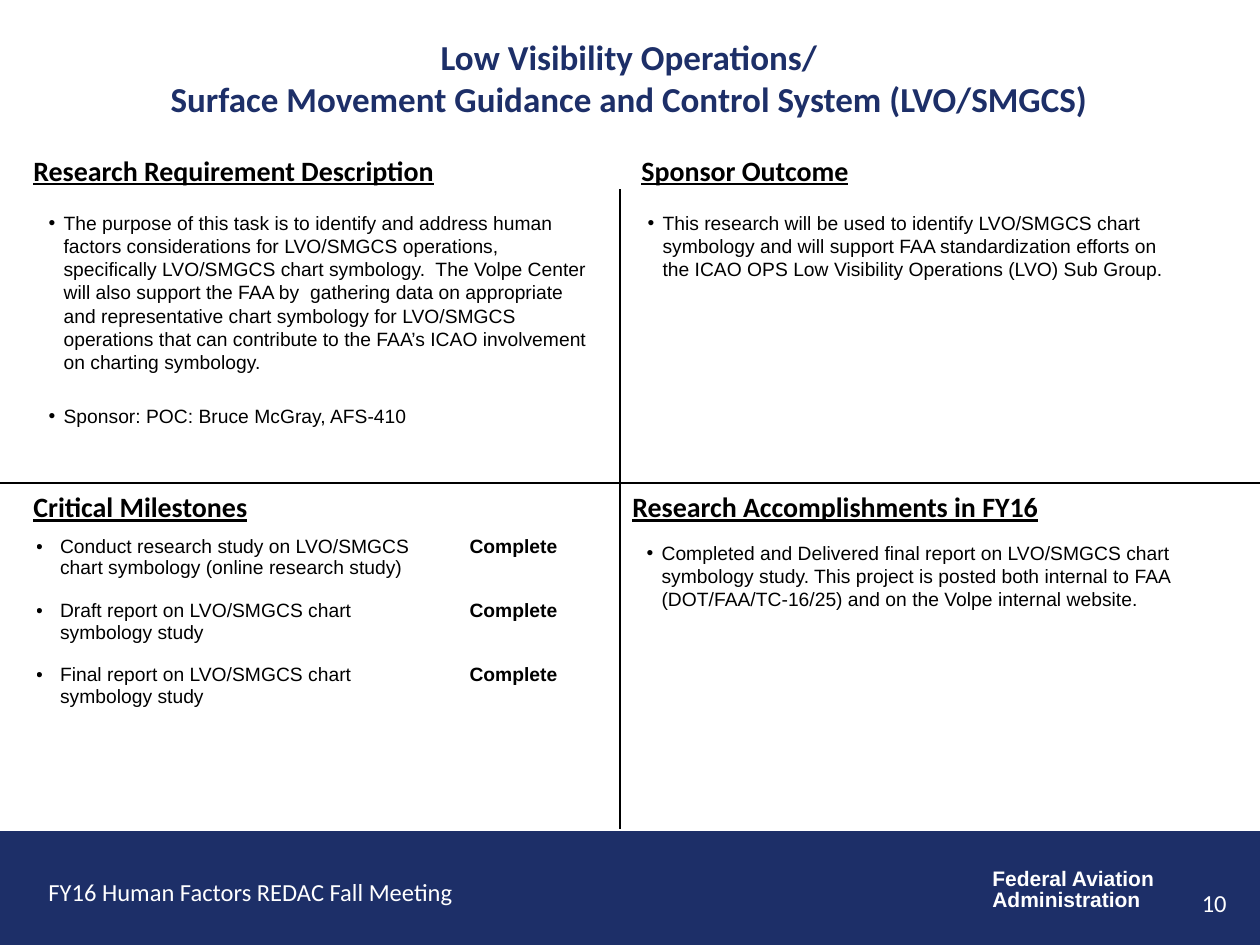
from lxml import etree
from pptx import Presentation
from pptx.dml.color import RGBColor
from pptx.enum.shapes import MSO_CONNECTOR, MSO_SHAPE
from pptx.enum.text import MSO_ANCHOR, MSO_AUTO_SIZE, PP_ALIGN
from pptx.oxml.ns import qn
from pptx.util import Emu, Pt

PX = 914400 / 126
WIDTH, HEIGHT = 1260, 945
NAVY, BLACK, WHITE = "1D2F68", "000000", "FFFFFF"
LEFT, CENTER, RIGHT = PP_ALIGN.LEFT, PP_ALIGN.CENTER, PP_ALIGN.RIGHT
TOP, MIDDLE = MSO_ANCHOR.TOP, MSO_ANCHOR.MIDDLE
STRAIGHT, RECTANGLE = MSO_CONNECTOR.STRAIGHT, MSO_SHAPE.RECTANGLE
NO_AUTOFIT = MSO_AUTO_SIZE.NONE

TITLE = "Low Visibility Operations/\vSurface Movement Guidance and Control System (LVO/SMGCS)"
HEADINGS = [
    ("Research Requirement Description", (21, 147, 630, 73)),
    ("Sponsor Outcome", (629, 147, 588, 48)),
    ("Critical Milestones", (21, 483, 567, 48)),
    ("Research Accomplishments in FY16", (620, 483, 557, 68)),
]
# Placeholder index, box and bullets of each text quadrant
BODIES = [
    (1, (36, 205, 567, 277), [
        "The purpose of this task is to identify and address human factors considerations for "
        "LVO/SMGCS operations, specifically LVO/SMGCS chart symbology.  The Volpe Center will "
        "also support the FAA by  gathering data on appropriate and representative chart "
        "symbology for LVO/SMGCS operations that can contribute to the FAA’s ICAO involvement "
        "on charting symbology.",
        "Sponsor: POC: Bruce McGray, AFS-410"]),
    (2, (635, 205, 567, 277), [
        "This research will be used to identify LVO/SMGCS chart symbology and will support FAA "
        "standardization efforts on the ICAO OPS Low Visibility Operations (LVO) Sub Group."]),
    (3, (634, 535, 567, 277), [
        "Completed and Delivered final report on LVO/SMGCS chart symbology study. This project "
        "is posted both internal to FAA (DOT/FAA/TC-16/25) and on the Volpe internal website."]),
]
MILESTONES = [
    ("Conduct research study on LVO/SMGCS chart symbology (online research study)", "Complete"),
    ("Draft report on LVO/SMGCS chart symbology study", "Complete"),
    ("Final report on LVO/SMGCS chart symbology study", "Complete"),
]


def px(length):
    return Emu(round(length * PX))


def color(hex_string):
    return RGBColor.from_string(hex_string)


def place(shape, box):
    shape.left, shape.top, shape.width, shape.height = map(px, box)


def style(para, font, size, ink, bold=False, underline=False, align=LEFT):
    para.alignment = align
    para.font.name, para.font.size = font, Pt(size)
    para.font.bold, para.font.underline = bold, underline
    para.font.color.rgb = color(ink)


def add_bullet(para, indent):
    props = para._p.get_or_add_pPr()
    props.set("marL", str(px(indent)))
    props.set("indent", str(-px(indent)))
    etree.SubElement(props, qn("a:buFont")).set("typeface", "Arial")
    etree.SubElement(props, qn("a:buChar")).set("char", "•")


def add_text(page, box, lines, *look, wrap=True, spacing=None, **options):
    frame = page.shapes.add_textbox(*map(px, box)).text_frame
    frame.word_wrap = wrap
    frame.text = "\n".join(lines)
    for para in frame.paragraphs:
        style(para, *look, **options)
        para.line_spacing = spacing


def add_rule(page, start, end):
    rule = page.shapes.add_connector(STRAIGHT, *map(px, start + end))
    rule.line.color.rgb = color(BLACK)
    rule.line.width = Pt(0.75)
    etree.SubElement(rule._element.spPr, qn("a:effectLst"))


def add_footer(page, box):
    left, top, width, height = box
    band = page.shapes.add_shape(RECTANGLE, *map(px, box))
    band.shadow.inherit = False
    band.fill.solid()
    band.fill.fore_color.rgb = band.line.color.rgb = color(NAVY)
    band.line.width = Pt(0.75)
    add_text(page, (left + 36, top + 39, 433, 43), ["FY16 Human Factors REDAC Fall Meeting"],
             "Calibri", 14, WHITE, wrap=False)
    add_text(page, (left + 980, top + 31, 189, 55), ["Federal Aviation", "Administration"],
             "Arial", 12, WHITE, wrap=False, spacing=0.85, bold=True)
    add_text(page, (left + 945, top + 50, 294, 44), ["10"], "Calibri", 14, WHITE, align=RIGHT)


def fill_title(title, box):
    place(title, box)
    frame = title.text_frame
    frame.text = TITLE
    frame.auto_size, frame.vertical_anchor = NO_AUTOFIT, MIDDLE
    style(frame.paragraphs[0], "Calibri", 20, NAVY, bold=True, align=CENTER)


def fill_body(body, box, lines):
    place(body, box)
    frame = body.text_frame
    frame.text = "\n".join(lines)
    frame.auto_size, frame.vertical_anchor = NO_AUTOFIT, TOP
    for index, para in enumerate(frame.paragraphs):
        para.space_before = Pt(18 if index else 0)
        add_bullet(para, 15)
        style(para, "Arial", 11, BLACK)


def add_milestones(page, box):
    table_frame = page.shapes.add_table(len(MILESTONES), 2, *map(px, box))
    table = table_frame.table
    table.first_row = table.horz_banding = False
    for column, width in zip(table.columns, (404, box[2] - 404)):
        column.width = px(width)
    for row, texts in zip(table.rows, MILESTONES):
        for index, (cell, text) in enumerate(zip(row.cells, texts)):
            cell.fill.background()
            cell.margin_left = cell.margin_right = cell.margin_top = cell.margin_bottom = 0
            cell.text = text
            para = cell.text_frame.paragraphs[0]
            if index == 0:
                add_bullet(para, 24)
            style(para, "Arial", 11, BLACK, bold=index == 1, align=CENTER if index else LEFT)


def main():
    deck = Presentation()
    deck.slide_width, deck.slide_height = px(WIDTH), px(HEIGHT)
    page = deck.slides.add_slide(deck.slide_layouts.get_by_name("Comparison"))
    holders = {holder.placeholder_format.idx: holder for holder in page.placeholders}

    # Footer band and quadrant frame
    add_footer(page, (0, 832, WIDTH, 112))
    for heading, box in HEADINGS:
        add_text(page, box, [heading], "Calibri", 16, BLACK, bold=True, underline=True)
    add_rule(page, (620, 189), (620, 829))
    add_rule(page, (0, 483), (WIDTH, 483))

    # Title and quadrant contents
    fill_title(page.shapes.title, (45, 19, 1168, 117))
    for index, box, lines in BODIES:
        fill_body(holders[index], box, lines)
    add_milestones(page, (36, 536, 551, 193))

    # The fourth quadrant holds the table, so its placeholder goes
    unused = holders[4]._element
    unused.getparent().remove(unused)
    deck.save("out.pptx")


if __name__ == "__main__":
    main()
